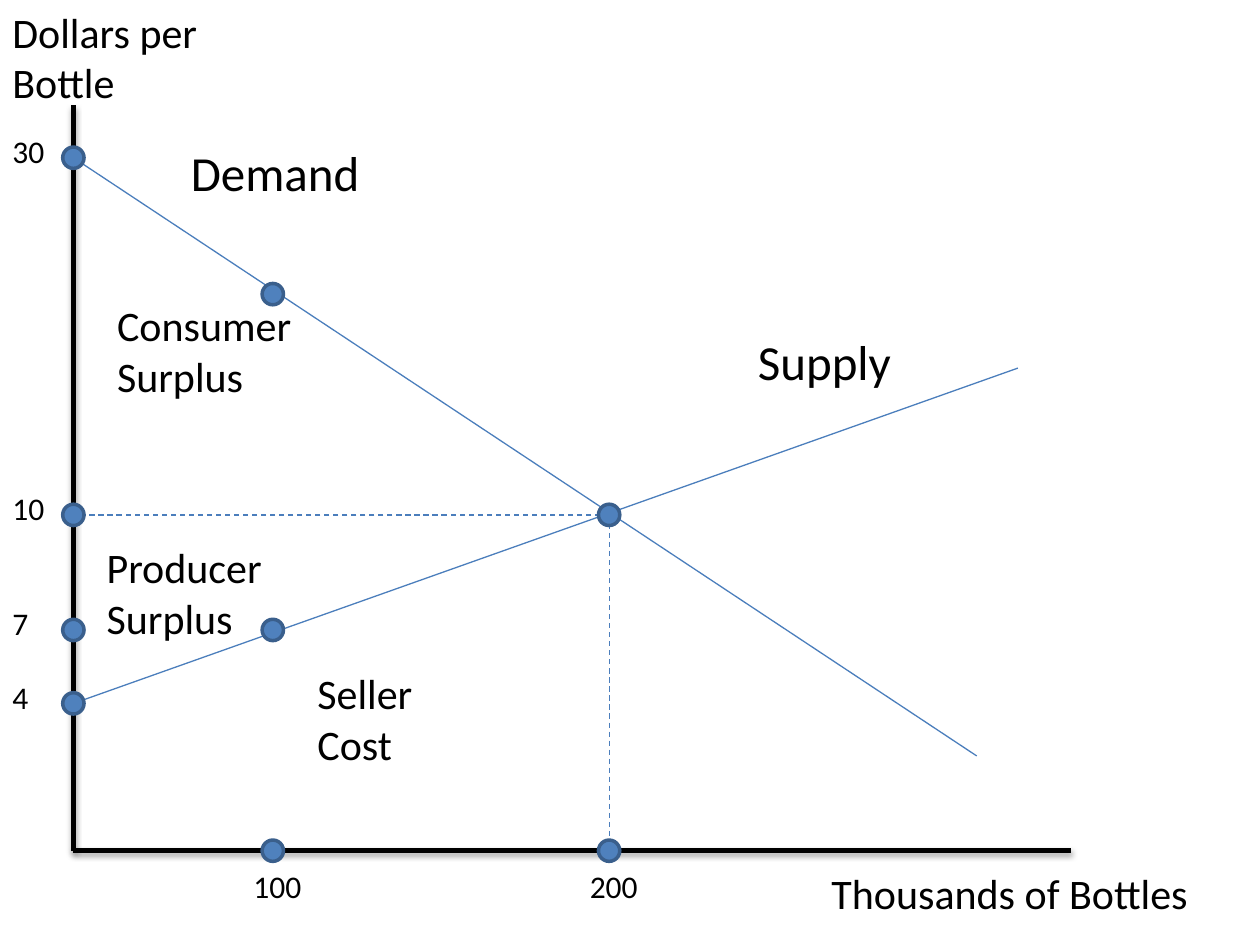
from dataclasses import dataclass

import pptx
import pptx.dml.color
import pptx.enum.dml
import pptx.enum.shapes
import pptx.enum.text
import pptx.oxml
import pptx.util
from pptx.util import Cm


@dataclass(frozen=True)
class Theme:
    font: str = "Calibri"
    ink: str = "000000"
    curve: str = "4B7EBC"
    dot_fill: str = "4F81BD"
    dot_edge: str = "3A5F8C"
    tick_size: int = 18
    label_size: int = 24
    curve_name_size: int = 28
    axis_width: float = 3
    curve_width: float = 0.75
    dot_edge_width: float = 2


THEME = Theme()
DRAWING_NS = 'xmlns:a="http://schemas.openxmlformats.org/drawingml/2006/main"'
NO_EFFECT = f"<a:effectLst {DRAWING_NS}/>"
AXIS_SHADOW = (
    f'<a:effectLst {DRAWING_NS}>'
    '<a:outerShdw blurRad="39370" dist="22860" dir="5400000" rotWithShape="0">'
    f'<a:srgbClr val="{THEME.ink}"><a:alpha val="35000"/></a:srgbClr>'
    '</a:outerShdw></a:effectLst>'
)

# Places in the plot, in cm from its top left corner
PLOT = (1.48, 2.12, 20.11, 15.03)  # left, top, width, height
QUANTITY_X = {"100": 4.02, "200": 10.8}
PRICE_Y = {"30": 1.06, "10": 8.26, "7": 10.58, "4": 12.06}
BUYER_Y = 3.81  # demand price at quantity 100
DEMAND_END = (18.21, 13.12)
SUPPLY_END = (19.04, 5.3)
DOT = 0.43
TICK_SHIFT = 0.64


def rgb(code):
    return pptx.dml.color.RGBColor.from_string(code)


def add_line(slide, box, start, end, color, width, dashed=False, effect=NO_EFFECT):
    left, top = box[:2]
    line = slide.shapes.add_connector(
        pptx.enum.shapes.MSO_CONNECTOR.STRAIGHT,
        Cm(left + start[0]), Cm(top + start[1]),
        Cm(left + end[0]), Cm(top + end[1]))
    line.line.color.rgb = rgb(color)
    line.line.width = pptx.util.Pt(width)
    if dashed:
        line.line.dash_style = pptx.enum.dml.MSO_LINE.DASH
    line._element.spPr.append(pptx.oxml.parse_xml(effect))


def add_label(slide, lines, left, top, width, height, size):
    label = slide.shapes.add_textbox(Cm(left), Cm(top), Cm(width), Cm(height))
    frame = label.text_frame
    frame.word_wrap = True
    frame.auto_size = pptx.enum.text.MSO_AUTO_SIZE.SHAPE_TO_FIT_TEXT
    for index, words in enumerate(lines):
        paragraph = frame.add_paragraph() if index else frame.paragraphs[0]
        run = paragraph.add_run()
        run.text = words
        run.font.name = THEME.font
        run.font.size = pptx.util.Pt(size)
        run.font.color.rgb = rgb(THEME.ink)


def add_dot(slide, box, x, y):
    dot = slide.shapes.add_shape(
        pptx.enum.shapes.MSO_SHAPE.OVAL,
        Cm(box[0] + x - DOT / 2), Cm(box[1] + y - DOT / 2), Cm(DOT), Cm(DOT))
    dot.shadow.inherit = False
    dot.fill.solid()
    dot.fill.fore_color.rgb = rgb(THEME.dot_fill)
    dot.line.color.rgb = rgb(THEME.dot_edge)
    dot.line.width = pptx.util.Pt(THEME.dot_edge_width)


def draw_axes(slide, box):
    width, height = box[2:]
    for end in ((0, 0), (width, height)):
        start = (0, height)
        add_line(slide, box, min(start, end), max(start, end),
                 THEME.ink, THEME.axis_width, effect=AXIS_SHADOW)


def draw_curves(slide, box):
    """Draw demand, supply and the dashed guides from their crossing."""
    equilibrium = (QUANTITY_X["200"], PRICE_Y["10"])
    for start, end, dashed in (
            ((0, PRICE_Y["30"]), DEMAND_END, False),
            ((0, PRICE_Y["4"]), SUPPLY_END, False),
            (equilibrium, (equilibrium[0], box[3]), True),
            (equilibrium, (0, equilibrium[1]), True)):
        add_line(slide, box, start, end, THEME.curve, THEME.curve_width, dashed)


def draw_ticks(slide, box):
    left, top, _, height = box
    for price, y in PRICE_Y.items():
        add_label(slide, [price], left - 1.48, top + y - TICK_SHIFT,
                  1.4, 1.02, THEME.tick_size)
    for quantity, x in QUANTITY_X.items():
        add_label(slide, [quantity], left + x - TICK_SHIFT, top + height + 0.21,
                  1.8, 1.02, THEME.tick_size)


def draw_labels(slide, box):
    """Name the areas, the curves and the axes."""
    for lines, x, y, width, height, size in (
            (["Consumer", "Surplus"], 0.63, 3.8, 4.2, 2.31, THEME.label_size),
            (["Producer Surplus"], 0.42, 8.68, 6.15, 3.33, THEME.label_size),
            (["Seller", "Cost"], 4.67, 11.22, 5.28, 3.33, THEME.label_size),
            (["Demand"], 2.12, 0.63, 8.05, 1.45, THEME.curve_name_size),
            (["Supply"], 13.55, 4.44, 7.62, 1.45, THEME.curve_name_size),
            (["Thousands of Bottles"], 15.03, 15.24, 8.26, 1.27, THEME.label_size),
            (["Dollars per", "Bottle"], -1.48, -2.12, 8.89, 3.33, THEME.label_size)):
        add_label(slide, lines, box[0] + x, box[1] + y, width, height, size)


def draw_dots(slide, box):
    for y in PRICE_Y.values():
        add_dot(slide, box, 0, y)
    for x in QUANTITY_X.values():
        add_dot(slide, box, x, box[3])
    for quantity, y in (("100", BUYER_Y), ("100", PRICE_Y["7"]), ("200", PRICE_Y["10"])):
        add_dot(slide, box, QUANTITY_X[quantity], y)


def main():
    deck = pptx.Presentation()
    deck.slide_width, deck.slide_height = Cm(25.4), Cm(19.05)
    slide = deck.slides.add_slide(deck.slide_layouts.get_by_name("Blank"))
    for draw in (draw_axes, draw_curves, draw_labels, draw_ticks, draw_dots):
        draw(slide, PLOT)
    deck.save("out.pptx")


if __name__ == "__main__":
    main()
